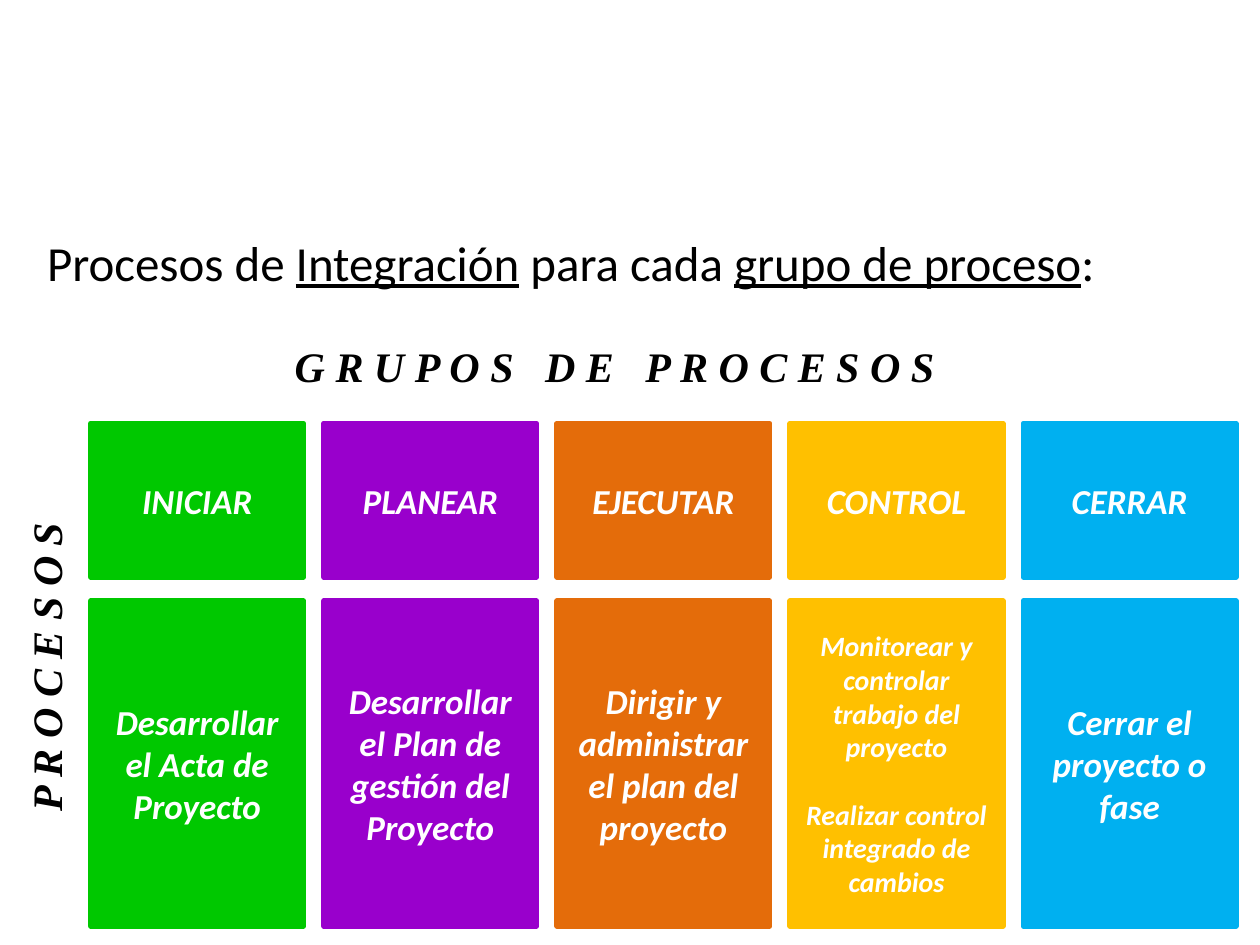
from dataclasses import dataclass

import pptx
import pptx.dml.color
import pptx.enum.shapes
import pptx.enum.text
import pptx.util
from pptx.util import Inches

RGBColor = pptx.dml.color.RGBColor
PP_ALIGN = pptx.enum.text.PP_ALIGN
MSO_ANCHOR = pptx.enum.text.MSO_ANCHOR
MSO_AUTO_SIZE = pptx.enum.text.MSO_AUTO_SIZE

BLACK = RGBColor(0x00, 0x00, 0x00)
WHITE = RGBColor(0xFF, 0xFF, 0xFF)
GREEN = RGBColor(0x00, 0xC8, 0x00)
PURPLE = RGBColor(0x99, 0x00, 0xCC)
ORANGE = RGBColor(0xE4, 0x6C, 0x0A)
AMBER = RGBColor(0xFF, 0xC0, 0x00)
BLUE = RGBColor(0x00, 0xB0, 0xF0)

FIRST_LEFT = 0.72
COLUMN_PITCH = 1.85
CARD_WIDTH = 1.69
GROUP_TOP, GROUP_HEIGHT = 3.36, 1.22
PROCESS_TOP, PROCESS_HEIGHT = 4.77, 2.58
WORD_GAP = "1200"


@dataclass
class ProcessGroup:
    name: str
    processes: list[str]
    color: RGBColor
    process_size: int = 20


@dataclass
class AxisLabel:
    words: list[str]
    left: float
    top: float
    width: float
    rotation: int
    wrap: bool


GROUPS = [
    ProcessGroup("INICIAR", ["Desarrollar el Acta de Proyecto"], GREEN),
    ProcessGroup("PLANEAR", ["Desarrollar el Plan de gestión del Proyecto"], PURPLE),
    ProcessGroup("EJECUTAR", ["Dirigir y administrar el plan del proyecto"], ORANGE),
    ProcessGroup(
        "CONTROL",
        ["Monitorear y controlar trabajo del proyecto",
         "Realizar control integrado de cambios"],
        AMBER,
        16,
    ),
    ProcessGroup("CERRAR", ["Cerrar el proyecto o fase"], BLUE),
]

AXIS_LABELS = [
    AxisLabel(["G R U P O S", "D E", "P R O C E S O S"], 2.24, 2.65, 5.45, 0, False),
    AxisLabel(["P R O C E S O S"], -0.93, 4.99, 2.59, 270, True),
]

TITLE_PARTS = [
    ("Procesos de ", False),
    ("Integración", True),
    (" para cada ", False),
    ("grupo de proceso", True),
    (":", False),
]


def style_font(font, name: str, size: int, color: RGBColor, emphasis: bool) -> None:
    font.name = name
    font.size = pptx.util.Pt(size)
    font.color.rgb = color
    font.bold = emphasis
    font.italic = emphasis


def draw_card(slide, left: float, top: float, height: float,
              lines: list[str], color: RGBColor, size: int) -> None:
    card = slide.shapes.add_shape(
        pptx.enum.shapes.MSO_SHAPE.RECTANGLE,
        Inches(left), Inches(top), Inches(CARD_WIDTH), Inches(height))
    card.shadow.inherit = False
    card.fill.solid()
    card.fill.fore_color.rgb = color
    card.line.color.rgb = color
    card.line.width = pptx.util.Pt(3)
    frame = card.text_frame
    frame.word_wrap = True
    frame.vertical_anchor = MSO_ANCHOR.MIDDLE
    frame.text = "\n".join(lines)
    for index, paragraph in enumerate(frame.paragraphs):
        paragraph.alignment = PP_ALIGN.CENTER
        if index:
            paragraph.space_before = pptx.util.Pt(19.5)
        for run in paragraph.runs:
            style_font(run.font, "Calibri", size, WHITE, True)


def draw_axis_label(slide, label: AxisLabel) -> None:
    box = slide.shapes.add_textbox(
        Inches(label.left), Inches(label.top), Inches(label.width), Inches(0.51))
    box.rotation = label.rotation
    frame = box.text_frame
    frame.word_wrap = label.wrap
    frame.auto_size = MSO_AUTO_SIZE.SHAPE_TO_FIT_TEXT
    paragraph = frame.paragraphs[0]
    for index, word in enumerate(label.words):
        if index:
            gap = paragraph.add_run()
            gap.text = " "
            gap.font._element.set("spc", WORD_GAP)
        paragraph.add_run().text = word
    for run in paragraph.runs:
        style_font(run.font, "Times New Roman", 24, BLACK, True)


def write_title(slide) -> None:
    title = slide.shapes.title
    title.left, title.top = Inches(0.03), Inches(1.45)
    title.width, title.height = Inches(9), Inches(1.25)
    frame = title.text_frame
    frame.word_wrap = True
    frame.auto_size = MSO_AUTO_SIZE.NONE
    frame.vertical_anchor = MSO_ANCHOR.MIDDLE
    paragraph = frame.paragraphs[0]
    paragraph.alignment = PP_ALIGN.CENTER
    for text, underlined in TITLE_PARTS:
        run = paragraph.add_run()
        run.text = text
        style_font(run.font, "Calibri", 28, BLACK, False)
        run.font.underline = underlined


def main() -> None:
    presentation = pptx.Presentation()
    presentation.slide_width = Inches(10)
    presentation.slide_height = Inches(7.5)
    slide = presentation.slides.add_slide(presentation.slide_layouts[5])
    write_title(slide)
    for label in AXIS_LABELS:
        draw_axis_label(slide, label)
    for column, group in enumerate(GROUPS):
        left = FIRST_LEFT + column * COLUMN_PITCH
        draw_card(slide, left, GROUP_TOP, GROUP_HEIGHT, [group.name], group.color, 20)
        draw_card(slide, left, PROCESS_TOP, PROCESS_HEIGHT,
                  group.processes, group.color, group.process_size)
    presentation.save("out.pptx")


if __name__ == "__main__":
    main()
